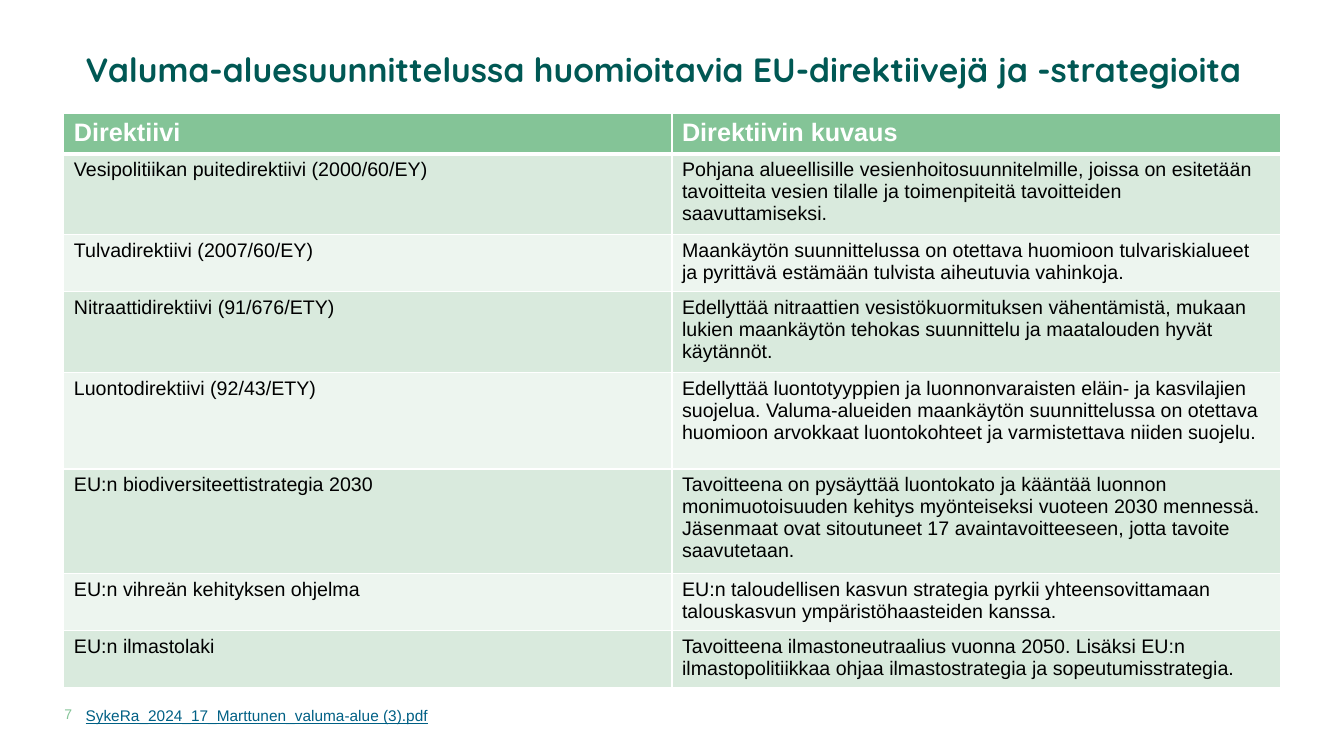
from lxml.etree import SubElement
from pptx import Presentation
from pptx.dml.color import RGBColor
from pptx.enum.text import MSO_ANCHOR, MSO_AUTO_SIZE, PP_ALIGN
from pptx.oxml.ns import qn
from pptx.util import Inches, Pt

COLORS = {
    "title": "005854",
    "header": "84C497",
    "band_dark": "D9EADD",
    "band_light": "EDF5EF",
    "white": "FFFFFF",
    "black": "000000",
    "link": "006085",
}
GRID_COLS, GRID_ROWS = 160, 90
ROW_HEIGHTS = [4.8, 9, 6.8, 9.6, 11.5, 12.4, 6.8, 6.8]
DIRECTIVES = [
    ("Direktiivi", "Direktiivin kuvaus"),
    ("Vesipolitiikan puitedirektiivi (2000/60/EY)",
     "Pohjana alueellisille vesienhoitosuunnitelmille, joissa on esitetään tavoitteita "
     "vesien tilalle ja toimenpiteitä tavoitteiden saavuttamiseksi."),
    ("Tulvadirektiivi (2007/60/EY)",
     "Maankäytön suunnittelussa on otettava huomioon tulvariskialueet ja pyrittävä "
     "estämään tulvista aiheutuvia vahinkoja."),
    ("Nitraattidirektiivi (91/676/ETY)",
     "Edellyttää nitraattien vesistökuormituksen vähentämistä, mukaan lukien maankäytön "
     "tehokas suunnittelu ja maatalouden hyvät käytännöt."),
    ("Luontodirektiivi (92/43/ETY)",
     "Edellyttää luontotyyppien ja luonnonvaraisten eläin- ja kasvilajien suojelua. "
     "Valuma-alueiden maankäytön suunnittelussa on otettava huomioon arvokkaat "
     "luontokohteet ja varmistettava niiden suojelu."),
    ("EU:n biodiversiteettistrategia 2030",
     "Tavoitteena on pysäyttää luontokato ja kääntää luonnon monimuotoisuuden kehitys "
     "myönteiseksi vuoteen 2030 mennessä. Jäsenmaat ovat sitoutuneet 17 "
     "avaintavoitteeseen, jotta tavoite saavutetaan."),
    ("EU:n vihreän kehityksen ohjelma",
     "EU:n taloudellisen kasvun strategia pyrkii yhteensovittamaan talouskasvun "
     "ympäristöhaasteiden kanssa."),
    ("EU:n ilmastolaki",
     "Tavoitteena ilmastoneutraalius vuonna 2050. Lisäksi EU:n ilmastopolitiikkaa ohjaa "
     "ilmastostrategia ja sopeutumisstrategia."),
]


class SlideBuilder:
    def __init__(self, prs):
        self.unit = prs.slide_width / GRID_COLS
        self.slide = prs.slides.add_slide(prs.slide_layouts[5])

    def grid(self, *lengths):
        return [round(length * self.unit) for length in lengths]

    def set_text(self, tf, text, size, color, font="Arial", bold=False, underline=None):
        tf.text = text
        p = tf.paragraphs[0]
        f = p.runs[0].font
        f.name, f.size, f.bold, f.underline = font, Pt(size), bold, underline
        f.color.rgb = RGBColor.from_string(COLORS[color])
        return p

    def title(self, box, text):
        sp = self.slide.shapes.title
        sp.left, sp.top, sp.width, sp.height = self.grid(*box)
        tf = sp.text_frame
        tf.word_wrap = True
        tf.auto_size = MSO_AUTO_SIZE.NONE
        tf.vertical_anchor = MSO_ANCHOR.MIDDLE
        p = self.set_text(tf, text, 24, "title", "Quicksand", True)
        p.alignment = PP_ALIGN.LEFT
        p.line_spacing = 0.9

    def link(self, box, text):
        tf = self.slide.shapes.add_textbox(*self.grid(*box)).text_frame
        tf.word_wrap = True
        self.set_text(tf, text, 11, "link", underline=True)

    def page_number(self, box, text):
        tf = self.slide.shapes.add_textbox(*self.grid(*box)).text_frame
        tf.margin_left = tf.margin_top = tf.margin_right = tf.margin_bottom = 0
        tf.word_wrap = False
        tf.vertical_anchor = MSO_ANCHOR.BOTTOM
        self.set_text(tf, text, 10, "header").alignment = PP_ALIGN.RIGHT

    def borders(self, cell, top, bottom):
        tc_pr = cell._tc.get_or_add_tcPr()
        for side, width in (("L", 1), ("R", 1), ("T", top), ("B", bottom)):
            ln = SubElement(tc_pr, qn(f"a:ln{side}"), w=str(Pt(width)))
            fill = SubElement(ln, qn("a:solidFill"))
            SubElement(fill, qn("a:srgbClr"), val=COLORS["white"])

    def table(self, left, top, width, heights, rows):
        box = self.grid(left, top, width, sum(heights))
        table = self.slide.shapes.add_table(len(rows), len(rows[0]), *box).table
        for i, (height, texts) in enumerate(zip(heights, rows)):
            table.rows[i].height = self.grid(height)[0]
            header = i == 0
            band = "header" if header else "band_dark" if i % 2 else "band_light"
            for j, text in enumerate(texts):
                cell = table.cell(i, j)
                self.borders(cell, 3 if i == 1 else 1, 3 if header else 1)
                cell.fill.solid()
                cell.fill.fore_color.rgb = RGBColor.from_string(COLORS[band])
                self.set_text(cell.text_frame, text, 18 if header else 14,
                              "white" if header else "black", bold=header)


def main():
    prs = Presentation()
    prs.slide_width = Inches(GRID_COLS / 12)
    prs.slide_height = Inches(GRID_ROWS / 12)
    s = SlideBuilder(prs)
    s.page_number((0.8, 83.6, 7.8, 2.4), "7")
    s.title((9, 2, 142, 13),
            "Valuma-aluesuunnittelussa huomioitavia EU-direktiivejä ja -strategioita")
    s.table(7.6, 13.5, 144.8, ROW_HEIGHTS, DIRECTIVES)
    s.link((9, 83.5, 80, 3.5), "SykeRa_2024_17_Marttunen_valuma-alue (3).pdf")
    prs.save("out.pptx")


if __name__ == "__main__":
    main()
